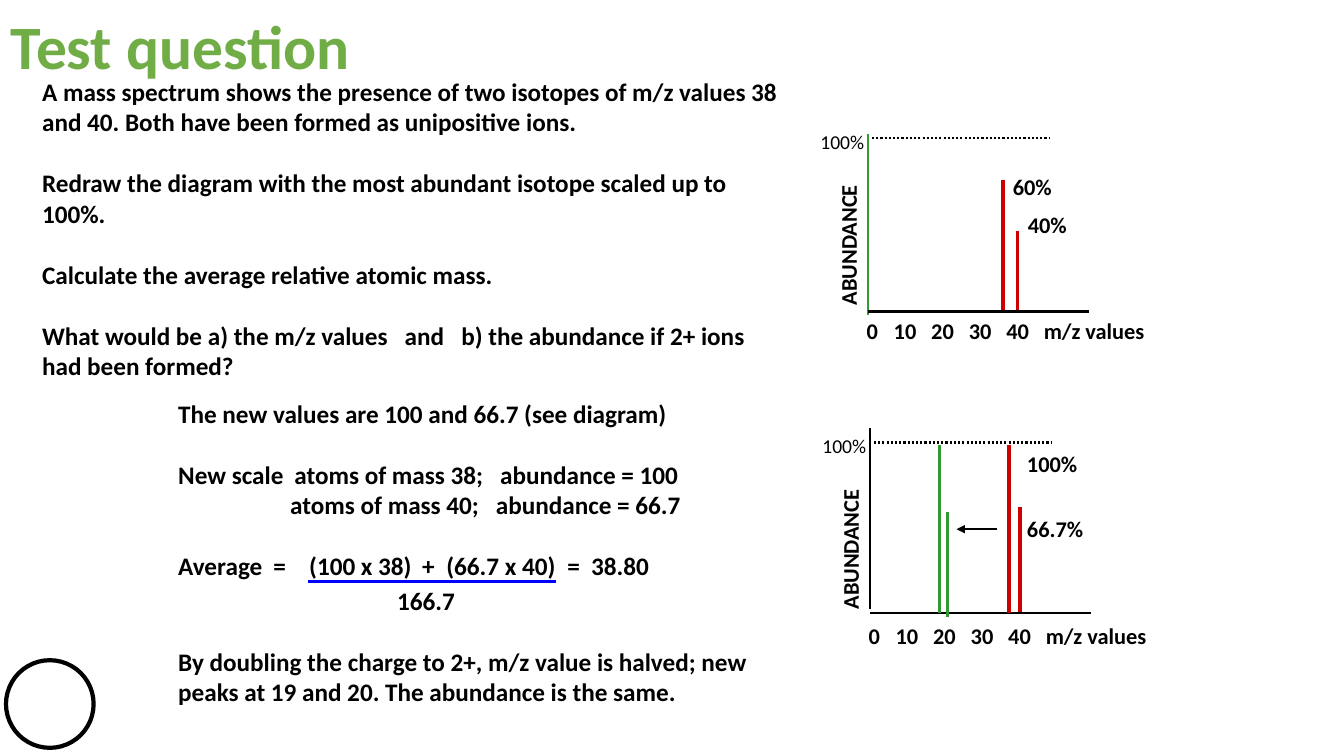
from lxml.etree import SubElement
from pptx import Presentation
from pptx.dml.color import RGBColor
from pptx.enum.dml import MSO_LINE
from pptx.enum.shapes import MSO_CONNECTOR, MSO_SHAPE
from pptx.oxml.ns import qn
from pptx.util import Pt

BLACK = RGBColor(0x00, 0x00, 0x00)
WHITE = RGBColor(0xFF, 0xFF, 0xFF)
TITLE_GREEN = RGBColor(0x70, 0xAD, 0x47)
GREEN = RGBColor(0x33, 0x99, 0x33)
RED = RGBColor(0xCC, 0x00, 0x00)
BLUE = RGBColor(0x00, 0x00, 0xFF)
LINE_GAP = 22
AXIS_STOPS = [19.3 + 26.8 * step for step in range(5)]

# Each paragraph: text, tab stops, format values
QUESTION = [
    ("A mass spectrum shows the presence of two isotopes of m/z values 38 and 40. "
     "Both have been formed as unipositive ions.", [], {}),
    ("Redraw the diagram with the most abundant isotope scaled up to 100%.",
     [], {"space_before": Pt(LINE_GAP)}),
    ("Calculate the average relative atomic mass.",
     [], {"space_before": Pt(LINE_GAP)}),
    ("What would be a) the m/z values\tand\tb) the abundance if 2+ ions had been formed?",
     [259, 299.5], {"space_before": Pt(LINE_GAP)}),
]
ANSWER = [
    ("The new values are 100 and 66.7 (see diagram)", [], {}),
    ("New scale\tatoms of mass 38;\tabundance = 100",
     [83, 230], {"space_before": Pt(LINE_GAP)}),
    ("\tatoms of mass 40;\tabundance = 66.7", [80, 227], {}),
    ("Average\t=\t(100 x 38)\t+\t(66.7 x 40)\t=\t38.80",
     [68, 93.6, 174.3, 191.6, 278, 295],
     {"space_before": Pt(LINE_GAP), "space_after": Pt(3.3)}),
    ("\t166.7", [156.4], {}),
    ("By doubling the charge to 2+, m/z value is halved; "
     "new peaks at 19 and 20. The abundance is the same.",
     [], {"space_before": Pt(LINE_GAP)}),
]


def set_values(target, values):
    for name, value in values.items():
        setattr(target, name, value)


def add_tab_stops(para, stops):
    if stops:
        tabs = SubElement(para._p.get_or_add_pPr(), qn("a:tabLst"))
        for stop in stops:
            SubElement(tabs, qn("a:tab"), pos=str(Pt(stop)), algn="l")


def add_text(page, box, paragraphs, size, bold=True, color=BLACK):
    shape = page.shapes.add_textbox(*map(Pt, box))
    frame = shape.text_frame
    frame.word_wrap = True
    for index, (text, stops, spacing) in enumerate(paragraphs):
        para = frame.add_paragraph() if index else frame.paragraphs[0]
        set_values(para, spacing)
        add_tab_stops(para, stops)
        span = para.add_run()
        span.text = text
        set_values(span.font, {"name": "Calibri", "size": Pt(size), "bold": bold})
        span.font.color.rgb = color
    return shape


def add_line(page, start, end, color=BLACK, width=1.5, dash=None, arrow=False):
    line = page.shapes.add_connector(MSO_CONNECTOR.STRAIGHT, *map(Pt, (*start, *end)))
    line.line.color.rgb = color
    set_values(line.line, {"width": Pt(width), "dash_style": dash})
    if arrow:
        SubElement(line.line._get_or_add_ln(), qn("a:tailEnd"), type="triangle")
    SubElement(line._element.spPr, qn("a:effectLst"))


def add_spectrum(page, left, top, axis, baseline, peaks, label_at, labels):
    """Draw axes, peaks and labels; axis holds its top, bottom and colour."""
    axis_top, axis_bottom, axis_color = axis
    add_line(page, (left + 41, top + axis_top), (left + 41, top + axis_bottom), axis_color)
    add_line(page, (left + 41, top + baseline), (left + 198.7, top + baseline))
    add_line(page, (left + 44, top + 9.4), (left + 171.4, top + 9.4),
             dash=MSO_LINE.ROUND_DOT)
    for x, peak_top, peak_bottom, color in peaks:
        add_line(page, (left + x, top + peak_top), (left + x, top + peak_bottom), color, 2.25)

    add_text(page, (left, top, 59, 24.5), [("100%", [], {})], 14, bold=False)
    add_text(page, (left + 33.1, top + 133.9, 219.6, 26.6),
             [("0\t10\t20\t30\t40\tm/z values", AXIS_STOPS, {})], 16)
    abundance = add_text(page, (left - 32, top + 63.4, 118, 26.6),
                         [("ABUNDANCE", [], {})], 16)
    abundance.rotation = 270
    label_x, label_y = label_at
    add_text(page, (left + label_x, top + label_y, 59, 65), labels, 16)


def add_answer(page, left, top):
    add_text(page, (left, top, 453, 229), ANSWER, 18)
    add_line(page, (left + 100, top + 134.6), (left + 277.2, top + 134.6), BLUE)


def add_circle(page, left, top, size):
    circle = page.shapes.add_shape(MSO_SHAPE.OVAL, *map(Pt, (left, top, size, size)))
    circle.shadow.inherit = False
    circle.fill.solid()
    circle.fill.fore_color.rgb = WHITE
    circle.line.color.rgb = BLACK
    circle.line.width = Pt(3)


def main():
    deck = Presentation()
    set_values(deck, {"slide_width": Pt(960), "slide_height": Pt(540)})
    page = deck.slides.add_slide(deck.slide_layouts[6])

    add_circle(page, 4.3, 471.6, 62.6)
    add_text(page, (23, 51.1, 545.8, 225.4), QUESTION, 18)
    add_text(page, (0.7, 2.2, 720, 60.5), [("Test question", [], {})], 44, color=TITLE_GREEN)

    add_spectrum(page, 578.9, 89.3, (6.5, 135.4, GREEN), 133.2,
                 [(137.5, 39.6, 132.5, RED), (147.6, 75.6, 132.5, RED)],
                 (137.5, 31),
                 [("60%", [], {}), ("\t40%", [10.7], {"space_before": Pt(8)})])

    left, top = 580.3, 306.7
    add_spectrum(page, left, top, (-0.7, 128.2, BLACK), 131,
                 [(90.7, 11.5, 131, GREEN), (96.5, 59, 133.9, GREEN),
                  (140.4, 11.5, 131, RED), (148.3, 55.4, 130.3, RED)],
                 (146.2, 11.5),
                 [("100%", [], {}), ("66.7%", [], {"space_before": Pt(27)})])
    add_line(page, (left + 131.8, top + 71.3), (left + 103, top + 71.3), arrow=True)

    add_answer(page, 120.2, 280.8)
    deck.save("out.pptx")


if __name__ == "__main__":
    main()
